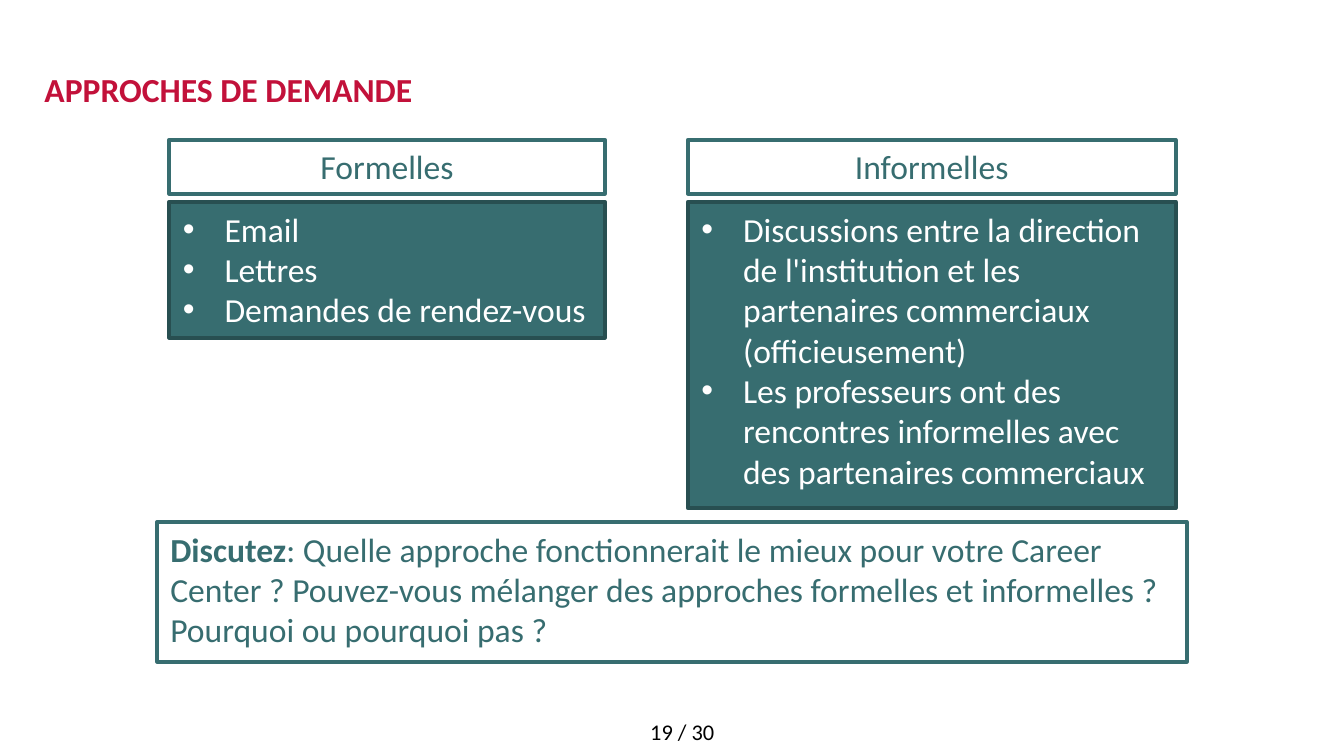
from dataclasses import dataclass

from lxml.etree import SubElement
from pptx import Presentation
from pptx.dml.color import RGBColor
from pptx.enum.shapes import MSO_SHAPE as Preset
from pptx.enum.text import MSO_ANCHOR as Anchor, MSO_AUTO_SIZE as AutoSize, PP_ALIGN as Align
from pptx.oxml.ns import qn
from pptx.util import Cm, Pt


@dataclass(frozen=True)
class Theme:
    font: str = "Calibri"
    white: RGBColor = RGBColor(0xFF, 0xFF, 0xFF)
    black: RGBColor = RGBColor(0, 0, 0)
    red: RGBColor = RGBColor(0xC2, 0x11, 0x3A)
    teal: RGBColor = RGBColor(0x37, 0x6D, 0x70)
    dark_teal: RGBColor = RGBColor(0x28, 0x4F, 0x51)
    main_size: Pt = Pt(18)
    small_size: Pt = Pt(12)
    border: Pt = Pt(2)


THEME = Theme()
TWO_CONTENT_LAYOUT = 3
HEADER_TOP, HEADER_HEIGHT = 2.64, 1.02
LIST_TOP = 3.81
COLUMNS = [
    ("Formelles", 3.2, 8.23, 2.57, ["Email", "Lettres", "Demandes de rendez-vous"]),
    ("Informelles", 13, 9.22, 5.79, [
        "Discussions entre la direction de l'institution et les "
        "partenaires commerciaux (officieusement)",
        "Les professeurs ont des rencontres informelles avec "
        "des partenaires commerciaux",
    ]),
]
QUESTION = (": Quelle approche fonctionnerait le mieux pour votre Career Center ? "
            "Pouvez-vous mélanger des approches formelles et informelles ? "
            "Pourquoi ou pourquoi pas ?")


def place(box, left, top, width, height):
    box.left, box.top, box.width, box.height = Cm(left), Cm(top), Cm(width), Cm(height)


def paint(box, fill, line):
    box.fill.solid()
    box.fill.fore_color.rgb = fill
    box.line.color.rgb = line
    box.line.width = THEME.border


def style(para, color, size=THEME.main_size, align=Align.LEFT, bold=False):
    para.alignment = align
    para.font.name = THEME.font
    para.font.size = size
    para.font.bold = bold
    para.font.color.rgb = color


def prepare_frame(box, anchor=Anchor.TOP):
    frame = box.text_frame
    frame.word_wrap = True
    frame.auto_size = AutoSize.NONE
    frame.vertical_anchor = anchor
    return frame


def add_bullet(para):
    properties = para._p.get_or_add_pPr()
    properties.set("marL", str(Cm(0.79)))
    properties.set("indent", str(-Cm(0.79)))
    color = SubElement(properties, qn("a:buClr"))
    SubElement(color, qn("a:srgbClr"), val=str(THEME.white))
    SubElement(properties, qn("a:buFont"), typeface="Arial")
    SubElement(properties, qn("a:buChar"), char="•")


def fill_title(title, text):
    place(title, 0.84, 0.74, 23.7, 1.93)
    frame = prepare_frame(title, Anchor.MIDDLE)
    frame.margin_left = frame.margin_right = frame.margin_top = frame.margin_bottom = 0
    frame.text = text
    para = frame.paragraphs[0]
    para.line_spacing = Pt(20)
    style(para, THEME.red, align=Align.JUSTIFY, bold=True)


def fill_list(body, items, *bounds):
    place(body, *bounds)
    paint(body, THEME.teal, THEME.dark_teal)
    frame = prepare_frame(body)
    frame.text = "\n".join(items)
    for para in frame.paragraphs:
        add_bullet(para)
        para.space_before = Pt(0)
        style(para, THEME.white)


def add_outlined_box(page, align, *bounds):
    box = page.shapes.add_shape(Preset.RECTANGLE, *map(Cm, bounds))
    box.shadow.inherit = False
    paint(box, THEME.white, THEME.teal)
    para = prepare_frame(box).paragraphs[0]
    style(para, THEME.teal, align=align)
    return para


def add_page_number(page, text):
    box = page.shapes.add_textbox(Cm(11.13), Cm(13.44), Cm(3.53), Cm(0.79))
    frame = prepare_frame(box)
    frame.text = text
    style(frame.paragraphs[0], THEME.black, THEME.small_size, Align.CENTER)


def main():
    deck = Presentation()
    deck.slide_width, deck.slide_height = Cm(25.4), Cm(14.28)
    page = deck.slides.add_slide(deck.slide_layouts[TWO_CONTENT_LAYOUT])
    title, *bodies = page.placeholders
    fill_title(title, "APPROCHES DE DEMANDE")
    for body, (heading, left, width, height, items) in zip(bodies, COLUMNS):
        header = add_outlined_box(page, Align.CENTER, left, HEADER_TOP, width, HEADER_HEIGHT)
        header.add_run().text = heading
        fill_list(body, items, left, LIST_TOP, width, height)
    discussion = add_outlined_box(page, Align.LEFT, 2.97, 9.86, 19.46, 2.64)
    lead = discussion.add_run()
    lead.text = "Discutez"
    lead.font.bold = True
    discussion.add_run().text = QUESTION
    add_page_number(page, "19 / 30")
    deck.save("out.pptx")


if __name__ == "__main__":
    main()
